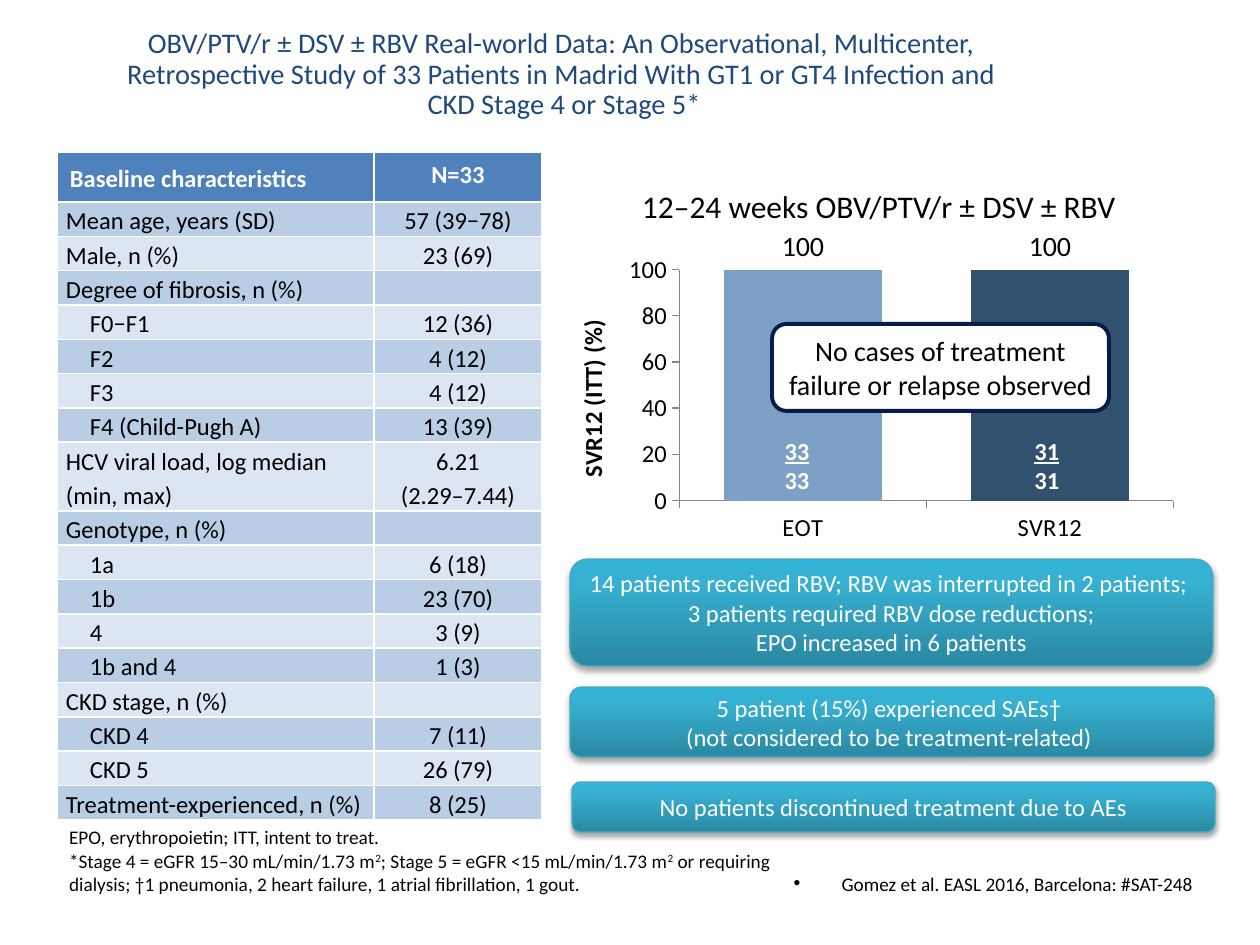
from copy import deepcopy
from lxml import etree
from pptx import Presentation, util as u
from pptx.chart import data as chart_data
from pptx.dml import color as dml
from pptx.enum import chart as ec, shapes, text
from pptx.oxml import parse_xml
from pptx.oxml.ns import nsdecls, qn

C = {"white": "FFFFFF", "black": "000000", "title": "1F497D", "head": "4F81BD",
     "band": "B9CDE5", "pale": "DCE6F2", "eot": "7DA1C4", "svr": "32516E",
     "navy": "071D49", "teal": "46AAC5", "axis": "868686", "note": "070605"}
TEAL_STOPS = [(0, "2A88A2"), (80, "37B1D2"), (100, "34B4D6")]

TITLE = ("OBV/PTV/r ± DSV ± RBV Real-world Data: An Observational, Multicenter, \n"
         "Retrospective Study of 33 Patients in Madrid With GT1 or GT4 Infection and \n"
         "CKD Stage 4 or Stage 5*")
CITATION = "Gomez et al. EASL 2016, Barcelona: #SAT-248"
HEADER = ("Baseline characteristics", "N=33")
BASELINE = [
    (0, "Mean age, years (SD)", "57 (39−78)"), (0, "Male, n (%)", "23 (69)"),
    (0, "Degree of fibrosis, n (%)", ""), (1, "F0−F1", "12 (36)"),
    (1, "F2", "4 (12)"), (1, "F3", "4 (12)"), (1, "F4 (Child-Pugh A)", "13 (39)"),
    (0, "HCV viral load, log median (min, max)", "6.21\n(2.29–7.44)"),
    (0, "Genotype, n (%)", ""), (1, "1a", "6 (18)"), (1, "1b", "23 (70)"),
    (1, "4", "3 (9)"), (1, "1b and 4", "1 (3)"), (0, "CKD stage, n (%)", ""),
    (1, "CKD 4", "7 (11)"), (1, "CKD 5", "26 (79)"),
    (0, "Treatment-experienced, n (%)", "8 (25)")]
FINDINGS = [
    ((570, 559, 643, 107), "14 patients received RBV; RBV was interrupted in 2 patients; \n"
     "3 patients required RBV dose reductions;\nEPO increased in 6 patients"),
    ((570, 687, 644, 70), "5 patient (15%) experienced SAEs† \n"
     "(not considered to be treatment-related) "),
    ((572, 782, 643, 50), "No patients discontinued treatment due to AEs")]
RESPONSE = {"EOT": (100, "eot"), "SVR12": (100, "svr")}
COUNTS = [(772, "33", "33"), (1022, "31", "31")]
FOOTNOTE = [("EPO, ", "note", 0), ("erythropoietin; ", "black", 0),
            ("ITT, intent to treat.\n*Stage 4 = eGFR 15–30 mL/min/1.73 m", "note", 0),
            ("2", "note", 1), ("; Stage 5 = eGFR <15 mL/min/1.73 m", "note", 0),
            ("2", "note", 1), (" or requiring dialysis; ", "note", 0), ("†", "black", 0),
            ("1 pneumonia, 2 heart failure, 1 atrial fibrillation, 1 gout.", "note", 0)]

LEFT, CENTER, RIGHT = text.PP_ALIGN.LEFT, text.PP_ALIGN.CENTER, text.PP_ALIGN.RIGHT
TOP, MIDDLE, BOTTOM = text.MSO_ANCHOR.TOP, text.MSO_ANCHOR.MIDDLE, text.MSO_ANCHOR.BOTTOM


def px(n):
    return u.Emu(round(n * 914400 / 126))


def rgb(name):
    return dml.RGBColor.from_string(C[name])


def style(font, size, color="black", bold=False):
    font.size, font.name, font.bold = u.Pt(size), "Calibri", bold
    font.color.rgb = rgb(color)


def write(para, words, size, color="black", bold=False, underline=False, raised=False):
    for i, line in enumerate(words.split("\n")):
        if i:
            para.add_line_break()
            para._p[-1].append(deepcopy(run.font._element))
        run = para.add_run()
        run.text = line
        style(run.font, size, color, bold)
        if underline:
            run.font.underline = True
        if raised:
            run.font._element.set("baseline", "30000")


def set_frame(frame, anchor, inset=(13, 6), wrap=True):
    frame.word_wrap, frame.vertical_anchor = wrap, anchor
    frame.margin_left = frame.margin_right = px(inset[0])
    frame.margin_top = frame.margin_bottom = px(inset[1])
    return frame.paragraphs[0]


def text_box(slide, box, anchor, **options):
    frame = slide.shapes.add_textbox(*map(px, box)).text_frame
    return frame, set_frame(frame, anchor, **options)


def rounded(slide, box, line, width, inset):
    shape = slide.shapes.add_shape(shapes.MSO_SHAPE.ROUNDED_RECTANGLE, *map(px, box))
    shape.shadow.inherit = False
    shape.line.color.rgb, shape.line.width = rgb(line), u.Pt(width)
    para = set_frame(shape.text_frame, MIDDLE, inset)
    para.alignment = CENTER
    return shape, para


def add_finding(slide, box, words):
    shape, para = rounded(slide, box, "teal", 0.75, (0, 0))
    write(para, words, 14, "white")
    props = shape._element.spPr
    stops = "".join(f'<a:gs pos="{p * 1000}"><a:srgbClr val="{c}"/></a:gs>' for p, c in TEAL_STOPS)
    props.find(qn("a:prstGeom")).addnext(parse_xml(
        f'<a:gradFill {nsdecls("a")} rotWithShape="1"><a:gsLst>{stops}</a:gsLst>'
        '<a:lin ang="16200000" scaled="0"/></a:gradFill>'))
    props.find(qn("a:effectLst")).append(parse_xml(
        f'<a:outerShdw {nsdecls("a")} blurRad="40000" dist="23000" dir="5400000" rotWithShape="0">'
        '<a:srgbClr val="000000"><a:alpha val="35000"/></a:srgbClr></a:outerShdw>'))


def fill_cell(cell, words, fill, inset, anchor=TOP, color="black", bold=False):
    cell.margin_left = cell.margin_right = px(inset[0])
    cell.margin_top = cell.margin_bottom = px(inset[1])
    cell.vertical_anchor = anchor
    para = cell.text_frame.paragraphs[0]
    if words:
        write(para, words, 14, color, bold)
    else:
        etree.SubElement(para._p, qn("a:endParaRPr"), sz="1400")
    props = cell._tc.get_or_add_tcPr()
    for side in ("lnL", "lnR", "lnT", "lnB"):
        props.append(parse_xml(f'<a:{side} {nsdecls("a")} w="12700"><a:solidFill>'
                               f'<a:srgbClr val="{C["white"]}"/></a:solidFill></a:{side}>'))
    cell.fill.solid()
    cell.fill.fore_color.rgb = rgb(fill)
    return para


def add_baseline(slide):
    header, total = 50, 668
    lines = [1 + value.count("\n") for _, _, value in BASELINE]
    heights = [header] + [n * (total - header) / sum(lines) for n in lines]
    table = slide.shapes.add_table(len(heights), 2, px(57), px(152), px(485), px(total)).table
    table.columns[0].width, table.columns[1].width = px(317), px(168)
    for row, height in zip(table.rows, heights):
        row.height = px(height)
    label = fill_cell(table.cell(0, 0), HEADER[0], "head", (13, 8), BOTTOM, "white", True)
    label.line_spacing, label.space_after = 1.15, u.Pt(3)
    fill_cell(table.cell(0, 1), HEADER[1], "head", (5, 8), TOP, "white", True).alignment = CENTER
    for r, (level, name, value) in enumerate(BASELINE, 1):
        fill = "band" if r % 2 else "pale"
        label = fill_cell(table.cell(r, 0), name, fill, (9, 0))
        if level:
            label._p.get_or_add_pPr().set("indent", str(px(24)))
        count = fill_cell(table.cell(r, 1), value, fill, (5, 0))
        count.alignment = CENTER
        label.line_spacing = count.line_spacing = 1.15


def add_response(slide):
    data = chart_data.CategoryChartData(number_format="General")
    data.categories = list(RESPONSE)
    data.add_series("Series 1", [value for value, _ in RESPONSE.values()])
    chart = slide.shapes.add_chart(ec.XL_CHART_TYPE.COLUMN_CLUSTERED,
                                   px(543), px(226), px(650), px(335), data).chart
    chart.has_legend = chart.has_title = False
    style(chart.font, 18)
    plot = chart.plots[0]
    plot.gap_width, plot.vary_by_categories = 57, False
    for point, (_, color) in enumerate(RESPONSE.values()):
        fill = plot.series[0].points[point].format.fill
        fill.solid()
        fill.fore_color.rgb = rgb(color)
    plot.has_data_labels = True
    labels = plot.data_labels
    labels.show_value, labels.position = True, ec.XL_LABEL_POSITION.OUTSIDE_END
    style(labels.font, 16)
    for axis in (chart.category_axis, chart.value_axis):
        axis.has_major_gridlines = False
        axis.major_tick_mark, axis.minor_tick_mark = ec.XL_TICK_MARK.OUTSIDE, ec.XL_TICK_MARK.NONE
        axis.format.line.color.rgb = rgb("axis")
        style(axis.tick_labels.font, 14)
    scale = chart.value_axis
    scale.minimum_scale, scale.maximum_scale, scale.major_unit = 0, 100, 20
    write(scale.axis_title.text_frame.paragraphs[0], "SVR12 (ITT) (%)", 14, bold=True)
    area = chart._chartSpace.chart.plotArea
    for old in area.findall(qn("c:layout")):
        area.remove(old)
    places = "".join(f'<c:{k} val="{v}"/>' for k, v in (
        ("layoutTarget", "inner"), ("xMode", "edge"), ("yMode", "edge"),
        ("x", 0.21), ("y", 0.13), ("w", 0.76), ("h", 0.69)))
    area.insert(0, parse_xml(f'<c:layout {nsdecls("c")}><c:manualLayout>{places}'
                             '</c:manualLayout></c:layout>'))


def main():
    deck = Presentation()
    deck.slide_width, deck.slide_height = px(1260), px(945)
    slide = deck.slides.add_slide(deck.slide_layouts[6])

    _, title = text_box(slide, (55, 24, 1018, 103), BOTTOM)
    title.alignment, title.line_spacing = CENTER, 0.9
    write(title, TITLE, 16.2, "title")

    _, citation = text_box(slide, (58, 864, 1148, 37), BOTTOM)
    citation.alignment = RIGHT
    write(citation, CITATION, 11)
    props = citation._p.get_or_add_pPr()
    props.set("marL", str(px(48)))
    props.set("indent", str(-px(48)))
    etree.SubElement(props, qn("a:buFont"), typeface="Arial")
    etree.SubElement(props, qn("a:buChar"), char="•")

    add_baseline(slide)
    for box, words in FINDINGS:
        add_finding(slide, box, words)
    add_response(slide)

    for left, reached, total in COUNTS:
        frame, para = text_box(slide, (left, 430, 50, 72), TOP, inset=(0, 6))
        write(para, reached, 14, "white", True, underline=True)
        write(frame.add_paragraph(), total, 14, "white", True)
        for line in frame.paragraphs:
            line.alignment = CENTER

    callout, para = rounded(slide, (772, 324, 337, 87), "navy", 2.25, (0, 6))
    callout.fill.solid()
    callout.fill.fore_color.rgb = rgb("white")
    para.space_before = u.Pt(1.5)
    write(para, "No cases of treatment\nfailure or relapse observed", 16)

    _, regimen = text_box(slide, (637, 187, 518, 37), MIDDLE, inset=(5, 6), wrap=False)
    regimen.alignment = LEFT
    write(regimen, "12–24 weeks OBV/PTV/r ± DSV ± RBV", 18)

    _, footnote = text_box(slide, (69, 824, 702, 71), BOTTOM, inset=(0, 0))
    for words, color, raised in FOOTNOTE:
        write(footnote, words, 11, color, raised=raised)

    deck.save("out.pptx")


if __name__ == "__main__":
    main()
